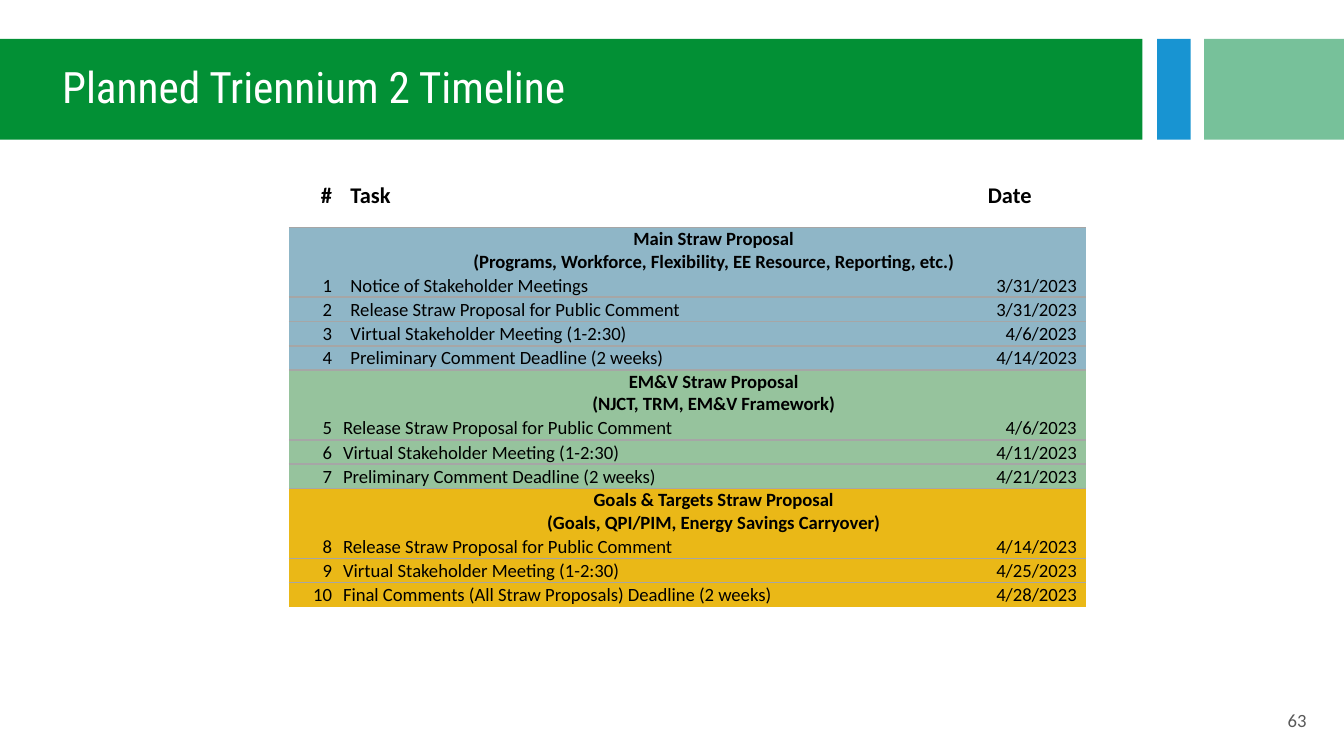
from lxml import etree
from pptx import Presentation
from pptx.dml.color import RGBColor
from pptx.enum import shapes, text
from pptx.oxml import ns
from pptx.util import Pt

LEFT, MID, RIGHT = text.PP_ALIGN.LEFT, text.PP_ALIGN.CENTER, text.PP_ALIGN.RIGHT
MIDDLE, BOTTOM = text.MSO_ANCHOR.MIDDLE, text.MSO_ANCHOR.BOTTOM


def tint(hue):
    return RGBColor.from_string(hue)


def write(frame, words, size, hue="000000", face="Calibri", bold=False, align=LEFT):
    para = frame.paragraphs[0]
    para.alignment = align
    for i, line in enumerate(words.split("\n")):
        if i:
            para.add_line_break()
        run = para.add_run()
        run.text = line
        run.font.size = Pt(size)
        run.font.name = face
        run.font.bold = bold
        run.font.color.rgb = tint(hue)
    return para


deck = Presentation()
deck.slide_width, deck.slide_height = Pt(720), Pt(405)
slide = deck.slides.add_slide(deck.slide_layouts[6])

for left, width, hue in [(619.9, 18, "1894D2"), (645.1, 74.9, "77C19A"), (-0.7, 612.7, "029035")]:
    bar = slide.shapes.add_shape(shapes.MSO_SHAPE.RECTANGLE, Pt(left), Pt(20.9), Pt(width), Pt(54))
    bar.shadow.inherit = False
    bar.fill.solid()
    bar.fill.fore_color.rgb = tint(hue)
    bar.line.fill.background()

title = slide.shapes.add_textbox(Pt(-0.7), Pt(20.9), Pt(612.7), Pt(54)).text_frame
title.word_wrap = True
title.vertical_anchor = MIDDLE
title.margin_left = Pt(34)
write(title, "Planned Triennium 2 Timeline", 23.2, "FFFFFF", "Roboto Condensed").line_spacing = 0.9

page = slide.shapes.add_textbox(Pt(545), Pt(375), Pt(162), Pt(21.6)).text_frame
page.word_wrap = True
page.vertical_anchor = MIDDLE
write(page, "63", 10, "595959", align=RIGHT)

release = "Release Straw Proposal for Public Comment"
meet = "Virtual Stakeholder Meeting (1-2:30)"
due = "Preliminary Comment Deadline (2 weeks)"
parts = [
    ("Main Straw Proposal\n(Programs, Workforce, Flexibility, EE Resource, Reporting, etc.)", "8FB6C7", 5,
     [("Notice of Stakeholder Meetings", "3/31/2023"), (release, "3/31/2023"),
      (meet, "4/6/2023"), (due, "4/14/2023")]),
    ("EM&V Straw Proposal\n(NJCT, TRM, EM&V Framework)", "96C39D", 1,
     [(release, "4/6/2023"), (meet, "4/11/2023"), (due, "4/21/2023")]),
    ("Goals & Targets Straw Proposal\n(Goals, QPI/PIM, Energy Savings Carryover)", "EAB817", 1,
     [(release, "4/14/2023"), (meet, "4/25/2023"),
      ("Final Comments (All Straw Proposals) Deadline (2 weeks)", "4/28/2023")]),
]

rows = [("head", ("#", "Task", "Date"), None, 5)]
count = 0
for name, hue, inset, tasks in parts:
    rows.append(("part", ("", name, ""), hue, 5))
    for task, date in tasks:
        count += 1
        rows.append(("task", (str(count), task, date), hue, inset))

tall = {"head": 34, "part": 24.5, "task": 13}
aligns = {"head": (RIGHT, LEFT, MID), "part": (RIGHT, MID, RIGHT), "task": (RIGHT, LEFT, RIGHT)}
high = sum(tall[row[0]] for row in rows)
frame = slide.shapes.add_table(len(rows), 3, Pt(154.8), Pt(87.8), Pt(427), Pt(high))
table = frame.table
table.first_row = table.horz_banding = False
style = table._tbl.tblPr.find(ns.qn("a:tableStyleId"))
style.text = "{2D5ABB26-0587-4C30-8999-92F81FD0307C}"
for col, width in zip(table.columns, (28, 323.4, 75.6)):
    col.width = Pt(width)

for r, (kind, words, hue, inset) in enumerate(rows):
    table.rows[r].height = Pt(tall[kind])
    if kind == "part":
        table.cell(r, 1).merge(table.cell(r, 2))
    for c, word in enumerate(words):
        cell = table.cell(r, c)
        cell.margin_top = cell.margin_bottom = 0
        cell.margin_left = Pt(inset if c == 1 else 5)
        cell.margin_right = Pt(11 if word == "Date" else 5)
        cell.vertical_anchor = MIDDLE if kind == "head" else BOTTOM
        if hue:
            cell.fill.solid()
            cell.fill.fore_color.rgb = tint(hue)
        else:
            cell.fill.background()
        if word:
            write(cell.text_frame, word, 12 if kind == "head" else 10,
                  bold=kind != "task", align=aligns[kind][c])
        if kind != "part" and r < len(rows) - 1:
            edge = etree.Element(ns.qn("a:lnB"), w=str(Pt(1)))
            paint = etree.SubElement(edge, ns.qn("a:solidFill"))
            etree.SubElement(paint, ns.qn("a:srgbClr"), val="A6A6A6")
            cell._tc.get_or_add_tcPr().insert(0, edge)

deck.save("out.pptx")
